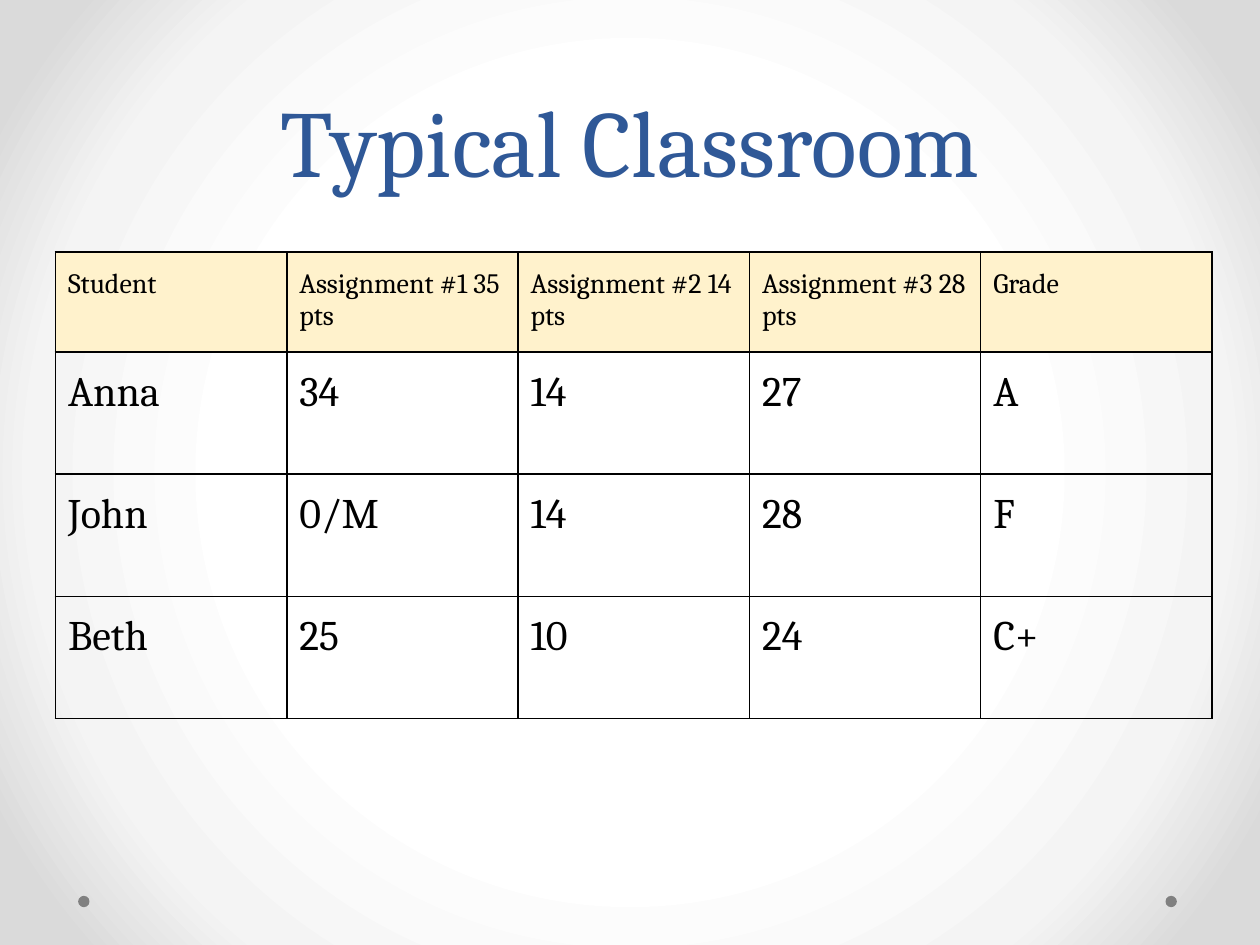
from dataclasses import dataclass

from lxml.etree import SubElement
from pptx import Presentation
from pptx.dml.color import RGBColor
from pptx.enum.shapes import MSO_SHAPE
from pptx.enum.text import MSO_ANCHOR, PP_ALIGN
from pptx.oxml import parse_xml
from pptx.oxml.ns import nsdecls, qn
from pptx.slide import Slide
from pptx.table import _Cell
from pptx.util import Inches, Pt

FONT = "Cambria"
COLORS = {
    "title": "2F5897",
    "text": "000000",
    "border": "000000",
    "header": "FFF2CC",
    "dot": "808080",
}
BACKGROUND_STOPS = [(50, "FFFFFF"), (76, "F4F4F4"), (92, "DADADA")]
GRADES = [
    ["Student", "Assignment #1 35 pts", "Assignment #2 14 pts", "Assignment #3 28 pts", "Grade"],
    ["Anna", "34", "14", "27", "A"],
    ["John", "0/M", "14", "28", "F"],
    ["Beth", "25", "10", "24", "C+"],
]
HEADER_HEIGHT = 0.67
STUDENT_HEIGHT = 0.97


@dataclass(frozen=True)
class Dot:
    left: float
    top: float = 7.11
    size: float = 0.09


DOTS = [Dot(9.25), Dot(0.62)]


def color(name: str) -> RGBColor:
    return RGBColor.from_string(COLORS[name])


def style_text(paragraph, size: int, color_name: str) -> None:
    paragraph.font.name = FONT
    paragraph.font.size = Pt(size)
    paragraph.font.color.rgb = color(color_name)


def paint_background(page: Slide) -> None:
    """Fill the page with a gradient that darkens from the centre outwards."""
    fill = page.background.fill
    fill.gradient()
    old = next(page.element.iter(qn("a:gradFill")))
    stops = "".join(
        f'<a:gs pos="{position * 1000}"><a:srgbClr val="{value}"/></a:gs>'
        for position, value in BACKGROUND_STOPS
    )
    gradient = parse_xml(
        f'<a:gradFill {nsdecls("a")} rotWithShape="1"><a:gsLst>{stops}</a:gsLst>'
        '<a:path path="circle"><a:fillToRect l="50000" t="50000" r="50000" b="50000"/>'
        "</a:path></a:gradFill>"
    )
    old.getparent().replace(old, gradient)


def add_dot(page: Slide, dot: Dot) -> None:
    shape = page.shapes.add_shape(
        MSO_SHAPE.OVAL, Inches(dot.left), Inches(dot.top), Inches(dot.size), Inches(dot.size)
    )
    shape.shadow.inherit = False
    shape.fill.solid()
    shape.fill.fore_color.rgb = color("dot")
    shape.line.fill.background()


def add_title(page: Slide, text: str) -> None:
    box = page.shapes.add_textbox(Inches(0.34), Inches(0.65), Inches(9.32), Inches(0.84))
    frame = box.text_frame
    frame.word_wrap = True
    frame.vertical_anchor = MSO_ANCHOR.TOP
    frame.margin_left = frame.margin_right = Inches(0.1)
    frame.margin_top = frame.margin_bottom = Inches(0.1)
    paragraph = frame.paragraphs[0]
    paragraph.text = text
    paragraph.alignment = PP_ALIGN.CENTER
    paragraph.line_spacing = Pt(58)
    style_text(paragraph, 54, "title")


def add_borders(cell: _Cell) -> None:
    """Outline the cell; the lines must come before its fill in the XML."""
    properties = cell._tc.get_or_add_tcPr()
    for index, side in enumerate(("lnL", "lnR", "lnT", "lnB")):
        line = SubElement(properties, qn(f"a:{side}"), w=str(Pt(1)))
        fill = SubElement(line, qn("a:solidFill"))
        SubElement(fill, qn("a:srgbClr"), val=COLORS["border"])
        properties.insert(index, line)


def fill_cell(cell: _Cell, text: str, is_header: bool) -> None:
    cell.text = text
    cell.margin_left = cell.margin_right = Inches(0.1)
    cell.margin_top = cell.margin_bottom = Inches(0.13)
    style_text(cell.text_frame.paragraphs[0], 16 if is_header else 24, "text")
    if is_header:
        cell.fill.solid()
        cell.fill.fore_color.rgb = color("header")
    else:
        cell.fill.background()
    add_borders(cell)


def add_grades(page: Slide) -> None:
    heights = [HEADER_HEIGHT] + [STUDENT_HEIGHT] * (len(GRADES) - 1)
    table = page.shapes.add_table(
        len(GRADES), len(GRADES[0]), Inches(0.44), Inches(2), Inches(9.18), Inches(sum(heights))
    ).table
    table.first_row = False
    table.horz_banding = False
    for row, height in zip(table.rows, heights):
        row.height = Inches(height)
    for row_index, values in enumerate(GRADES):
        for column_index, value in enumerate(values):
            fill_cell(table.cell(row_index, column_index), value, row_index == 0)


def main() -> None:
    deck = Presentation()
    deck.slide_width, deck.slide_height = Inches(10), Inches(7.5)
    page = deck.slides.add_slide(deck.slide_layouts[6])
    paint_background(page)
    for dot in DOTS:
        add_dot(page, dot)
    add_title(page, "Typical Classroom")
    add_grades(page)
    deck.save("out.pptx")


if __name__ == "__main__":
    main()
